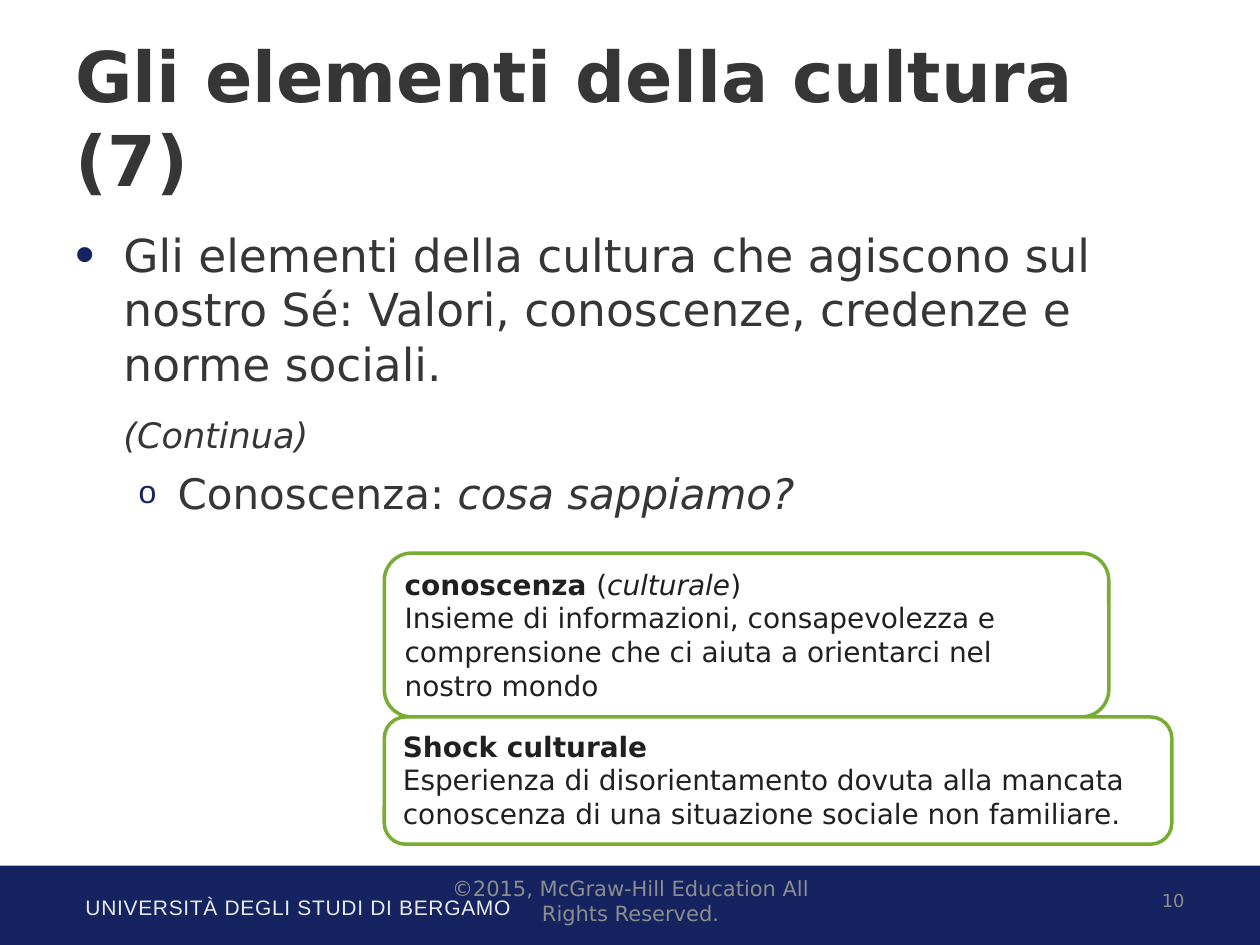
from dataclasses import dataclass

from lxml.etree import SubElement
from pptx import Presentation
from pptx.dml.color import RGBColor
from pptx.enum.shapes import MSO_SHAPE
from pptx.enum.text import MSO_ANCHOR, MSO_AUTO_SIZE, PP_ALIGN
from pptx.oxml.ns import qn
from pptx.util import Inches, Pt


@dataclass(frozen=True)
class Theme:
    font: str = "DejaVu Sans"
    band_font: str = "Arial"
    navy: str = "152460"
    green: str = "78AC35"
    white: str = "FFFFFF"
    heading: str = "363636"
    definition: str = "202020"
    muted: str = "8D8D8D"
    band_text: str = "E9E9E9"
    title_size: float = 40
    body_size: float = 26
    sub_size: float = 24
    note_size: float = 20
    definition_size: float = 16
    footer_size: float = 12
    number_size: float = 10.2


THEME = Theme()


def color(value):
    return RGBColor.from_string(value)


def place(shape, box):
    for name, value in zip(("left", "top", "width", "height"), box):
        setattr(shape, name, Inches(value))


def prepare_frame(shape, anchor=MSO_ANCHOR.TOP):
    frame = shape.text_frame
    settings = {"word_wrap": True, "auto_size": MSO_AUTO_SIZE.NONE,
                "vertical_anchor": anchor}
    for name, value in settings.items():
        setattr(frame, name, value)
    return frame


def add_run(paragraph, text, size, text_color, font=THEME.font, bold=False, italic=False):
    run = paragraph.add_run()
    run.text = text
    settings = {"name": font, "size": Pt(size), "bold": bold, "italic": italic}
    for name, value in settings.items():
        setattr(run.font, name, value)
    run.font.color.rgb = color(text_color)
    return run


def set_bullet(paragraph, character, percent, left, hanging):
    """Set the indents, and the bullet if a character is given."""
    properties = paragraph._p.get_or_add_pPr()
    properties.set("marL", str(Inches(left)))
    properties.set("indent", str(-Inches(hanging)))
    if not character:
        SubElement(properties, qn("a:buNone"))
        return
    bullet_color = SubElement(properties, qn("a:buClr"))
    SubElement(bullet_color, qn("a:srgbClr"), val=THEME.navy)
    SubElement(properties, qn("a:buSzPct"), val=str(percent * 1000))
    SubElement(properties, qn("a:buFont"), typeface=THEME.band_font)
    SubElement(properties, qn("a:buChar"), char=character)


def add_label(slide, box, text, size, text_color, align=PP_ALIGN.LEFT,
              anchor=MSO_ANCHOR.MIDDLE, font=THEME.font):
    label = slide.shapes.add_textbox(*map(Inches, box))
    paragraph = prepare_frame(label, anchor).paragraphs[0]
    paragraph.alignment = align
    return add_run(paragraph, text, size, text_color, font)


def add_band(slide, box):
    left, top, width, height = box
    band = slide.shapes.add_shape(MSO_SHAPE.RECTANGLE, *map(Inches, box))
    band.shadow.inherit = False
    band.fill.solid()
    band.fill.fore_color.rgb = color(THEME.navy)
    band.line.fill.background()
    university = add_label(slide, (left + 0.58, top + 0.18, 5.82, 0.3),
                           "UNIVERSITÀ DEGLI STUDI DI BERGAMO", THEME.footer_size,
                           THEME.band_text, anchor=MSO_ANCHOR.TOP, font=THEME.band_font)
    university._r.get_or_add_rPr().set("spc", "40")
    add_label(slide, (left + 7.17, top + 0.08, 2.33, 0.4), "10",
              THEME.number_size, THEME.muted, PP_ALIGN.RIGHT)
    add_label(slide, (left + 3.42, top + 0.08, 3.17, 0.4),
              "©2015, McGraw-Hill Education All Rights Reserved.",
              THEME.footer_size, THEME.muted, PP_ALIGN.CENTER)


def fill_title(slide, box):
    title = slide.shapes.title
    place(title, box)
    paragraph = prepare_frame(title, MSO_ANCHOR.MIDDLE).paragraphs[0]
    paragraph.alignment = PP_ALIGN.LEFT
    add_run(paragraph, "Gli elementi della cultura (7)", THEME.title_size,
            THEME.heading, bold=True)


def fill_body(slide, box):
    body = slide.placeholders[1]
    place(body, box)
    frame = prepare_frame(body)
    # level, space before, bullet (character, percent, left, hanging), size, runs
    items = [
        (0, 0, ("•", 122, 0.38, 0.38), THEME.body_size,
         [("Gli elementi della cultura che agiscono sul nostro Sé: "
           "Valori, conoscenze, credenze e norme sociali.", False)]),
        (0, 13, (None, 0, 0.38, 0), THEME.note_size, [("(Continua)", True)]),
        (1, 7, ("o", 76, 0.81, 0.31), THEME.sub_size,
         [("Conoscenza: ", False), ("cosa sappiamo?", True)]),
    ]
    for index, (level, space, bullet, size, runs) in enumerate(items):
        paragraph = frame.add_paragraph() if index else frame.paragraphs[0]
        paragraph.level = level
        paragraph.space_before = Pt(space)
        set_bullet(paragraph, *bullet)
        for text, italic in runs:
            add_run(paragraph, text, size, THEME.heading, italic=italic)


def add_definition(slide, box, term_runs, meaning):
    card = slide.shapes.add_shape(MSO_SHAPE.ROUNDED_RECTANGLE, *map(Inches, box))
    card.shadow.inherit = False
    card.fill.solid()
    card.fill.fore_color.rgb = color(THEME.white)
    card.line.color.rgb = color(THEME.green)
    card.line.width = Pt(2)
    frame = prepare_frame(card)
    for index, runs in enumerate((term_runs, [(meaning, {})])):
        paragraph = frame.add_paragraph() if index else frame.paragraphs[0]
        paragraph.alignment = PP_ALIGN.LEFT
        for text, style in runs:
            add_run(paragraph, text, THEME.definition_size, THEME.definition, **style)


def main():
    presentation = Presentation()
    presentation.slide_width = Inches(10)
    presentation.slide_height = Inches(7.5)
    slide = presentation.slides.add_slide(presentation.slide_layouts[1])
    add_band(slide, (0, 6.87, 10, 0.63))
    fill_title(slide, (0.5, 0.3, 9, 1.25))
    fill_body(slide, (0.5, 1.75, 9, 4.95))
    add_definition(
        slide, (3.05, 4.39, 5.75, 1.3),
        [("conoscenza ", {"bold": True}), ("(", {}),
         ("culturale", {"italic": True}), (")", {})],
        "Insieme di informazioni, consapevolezza e comprensione "
        "che ci aiuta a orientarci nel nostro mondo")
    add_definition(
        slide, (3.05, 5.69, 6.25, 1.01), [("Shock culturale", {"bold": True})],
        "Esperienza di disorientamento dovuta alla mancata "
        "conoscenza di una situazione sociale non familiare.")
    presentation.save("out.pptx")


if __name__ == "__main__":
    main()
